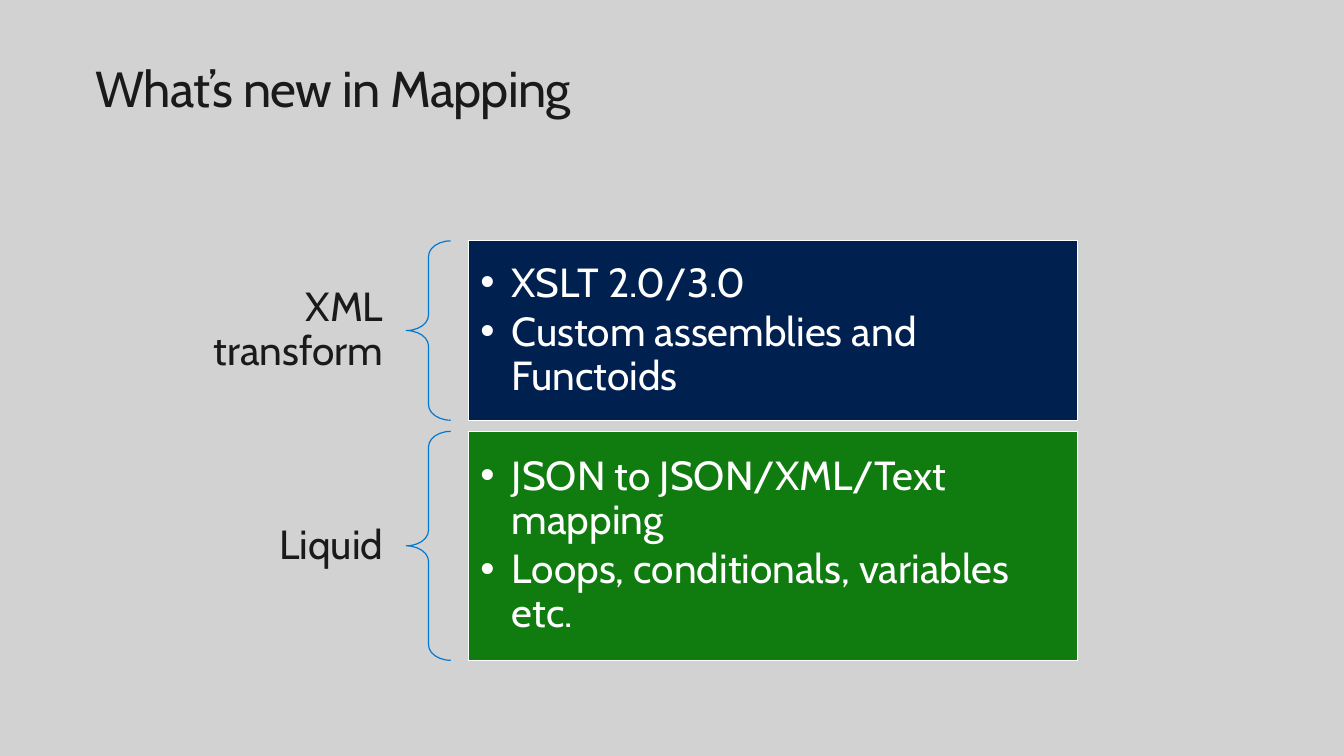
"""Build the slide "What's new in Mapping" with two bracketed topic panels."""
from lxml.etree import SubElement
from pptx import Presentation
from pptx.dml.color import RGBColor
from pptx.enum.shapes import MSO_SHAPE
from pptx.enum.text import MSO_ANCHOR, PP_ALIGN
from pptx.oxml.ns import qn
from pptx.util import Cm, Pt

GREY = RGBColor(0xD2, 0xD2, 0xD2)
INK = RGBColor(0x1A, 0x1A, 0x1A)
WHITE = RGBColor(0xFF, 0xFF, 0xFF)
BLUE = RGBColor(0x00, 0x78, 0xD4)
NAVY = RGBColor(0x00, 0x20, 0x50)
GREEN = RGBColor(0x10, 0x7C, 0x10)
FONT = "Cabin"

TITLE = "What’s new in Mapping"
TOPICS = [
    ("XML transform", NAVY, 4.52,
     ["XSLT 2.0/3.0", "Custom assemblies and Functoids"]),
    ("Liquid", GREEN, 5.77,
     ["JSON to JSON/XML/Text mapping", "Loops, conditionals, variables etc."]),
]

TOP, GAP = 6.07, 0.28
LABEL_X, LABEL_W = 4.6, 5.64
BRACE_X, BRACE_W = 10.24, 1.12
PANEL_X, PANEL_W = 11.81, 15.34
INDENT = 0.79


def add_run(p, text, size, color):
    r = p.add_run()
    r.text = text
    r.font.name, r.font.size = FONT, Pt(size)
    r.font.color.rgb = color
    return r


def set_frame(tf, side, edge):
    tf.word_wrap = True
    tf.vertical_anchor = MSO_ANCHOR.MIDDLE
    tf.margin_left = tf.margin_right = Cm(side)
    tf.margin_top = tf.margin_bottom = Cm(edge)


def add_shape(s, kind, x, y, w, h, line):
    sp = s.shapes.add_shape(kind, Cm(x), Cm(y), Cm(w), Cm(h))
    sp.shadow.inherit = False
    sp.line.color.rgb = line
    sp.line.width = Pt(0.85)
    return sp


def add_bullet(p):
    p.level = 1
    pPr = p._p.get_or_add_pPr()
    pPr.set("marL", str(Cm(INDENT)))
    pPr.set("indent", str(-Cm(INDENT)))
    SubElement(pPr, qn("a:buFont")).set("typeface", "Arial")
    SubElement(pPr, qn("a:buChar")).set("char", "•")


def add_topic(s, y, label, fill, height, points):
    tf = s.shapes.add_textbox(Cm(LABEL_X), Cm(y), Cm(LABEL_W), Cm(height)).text_frame
    set_frame(tf, 0.58, 0.2)
    p = tf.paragraphs[0]
    p.alignment, p.line_spacing = PP_ALIGN.RIGHT, 0.9
    add_run(p, label, 29, INK)

    brace = add_shape(s, MSO_SHAPE.LEFT_BRACE, BRACE_X, y, BRACE_W, height, BLUE)
    brace.fill.background()
    brace.adjustments[0] = 0.35

    panel = add_shape(s, MSO_SHAPE.RECTANGLE, PANEL_X, y, PANEL_W, height, WHITE)
    panel.fill.solid()
    panel.fill.fore_color.rgb = fill
    tf = panel.text_frame
    set_frame(tf, 0.3, 0.3)
    for i, point in enumerate(points):
        p = tf.add_paragraph() if i else tf.paragraphs[0]
        add_bullet(p)
        p.alignment, p.line_spacing, p.space_after = PP_ALIGN.LEFT, 0.9, Pt(4)
        add_run(p, point, 29, WHITE)


def main():
    prs = Presentation()
    prs.slide_width, prs.slide_height = Cm(33.87), Cm(19.05)
    s = prs.slides.add_slide(prs.slide_layouts[6])
    s.background.fill.solid()
    s.background.fill.fore_color.rgb = GREY

    tf = s.shapes.add_textbox(Cm(2.16), Cm(1.32), Cm(29.54), Cm(1.37)).text_frame
    tf.word_wrap = True
    r = add_run(tf.paragraphs[0], TITLE, 36, INK)
    r.font._element.set("spc", "-50")

    y = TOP
    for label, fill, height, points in TOPICS:
        add_topic(s, y, label, fill, height, points)
        y += height + GAP
    prs.save("out.pptx")


if __name__ == "__main__":
    main()
